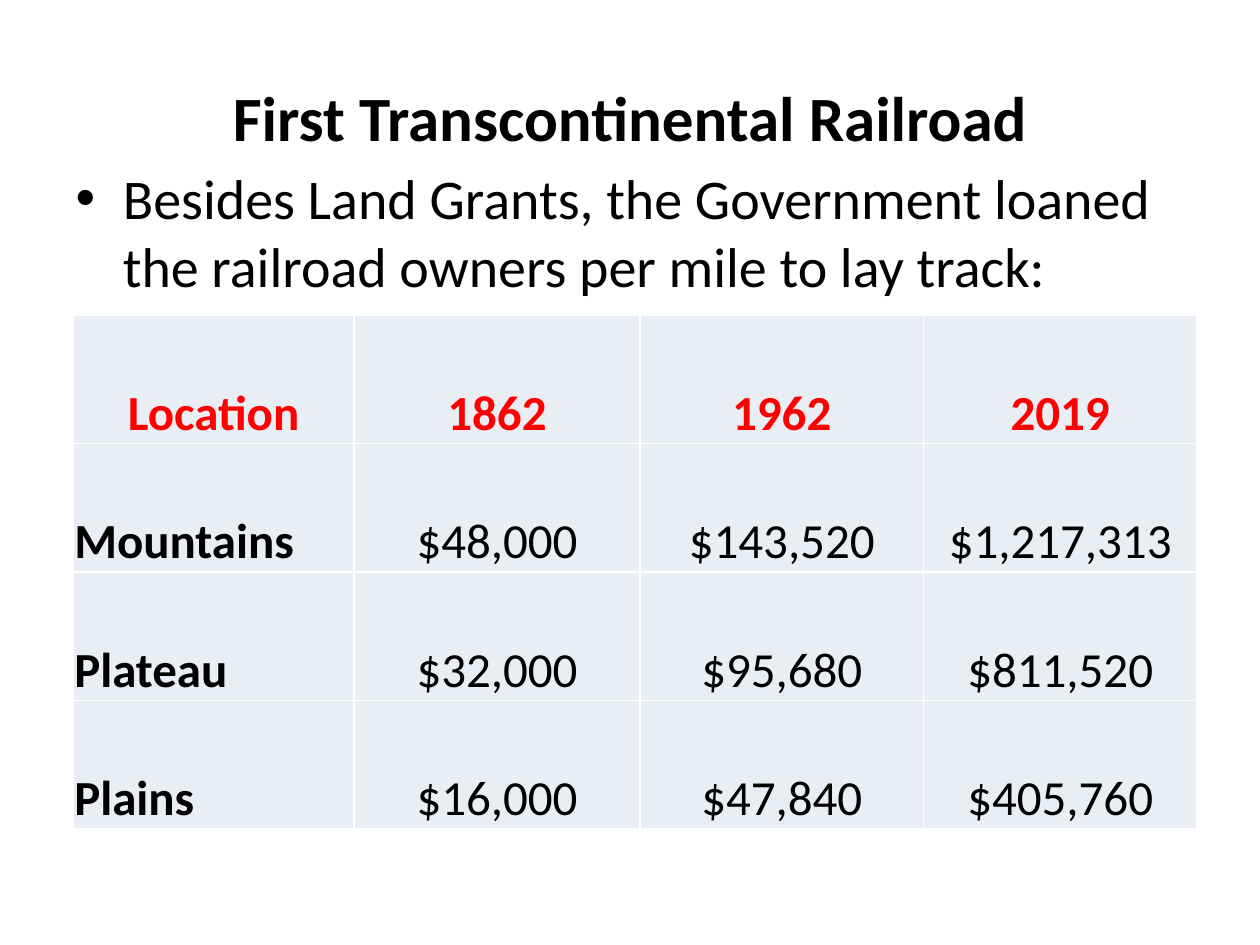
from typing import NamedTuple

from lxml.etree import SubElement
from pptx import Presentation
from pptx.dml.color import RGBColor
from pptx.enum.text import MSO_ANCHOR as Anchor, PP_ALIGN as Align
from pptx.oxml.ns import qn
from pptx.util import Inches, Pt

FONT = "Calibri"
BLACK, RED, WHITE, PALE_BLUE = "000000", "FF0000", "FFFFFF", "E9EDF4"
SLIDE_WIDTH, SLIDE_HEIGHT = Inches(10), Inches(7.5)
COLUMN_WIDTHS = (2.23, 2.27, 2.25, 2.17)
ROW_HEIGHT = 1.02


class Loan(NamedTuple):
    location: str
    in_1862: str
    in_1962: str
    in_2019: str


HEADINGS = Loan("Location", "1862", "1962", "2019")
LOANS = [
    Loan("Mountains", "$48,000", "$143,520", "$1,217,313"),
    Loan("Plateau", "$32,000", "$95,680", "$811,520"),
    Loan("Plains", "$16,000", "$47,840", "$405,760"),
]


def color(value: str) -> RGBColor:
    return RGBColor.from_string(value)


def place(shape, left: float, top: float, width: float, height: float) -> None:
    """Position a shape by shares of the slide's size."""
    shape.left, shape.width = int(left * SLIDE_WIDTH), int(width * SLIDE_WIDTH)
    shape.top, shape.height = int(top * SLIDE_HEIGHT), int(height * SLIDE_HEIGHT)


def write(frame, text: str, size: int, ink: str, bold: bool, align: Align) -> None:
    frame.text = text
    paragraph = frame.paragraphs[0]
    paragraph.alignment = align
    font = paragraph.font
    font.name, font.size, font.bold = FONT, Pt(size), bold
    font.color.rgb = color(ink)


def add_borders(cell, ink: str, width: float) -> None:
    properties = cell._tc.get_or_add_tcPr()
    for side in ("lnL", "lnR", "lnT", "lnB"):
        line = SubElement(properties, qn(f"a:{side}"), w=str(Pt(width)))
        fill = SubElement(line, qn("a:solidFill"))
        SubElement(fill, qn("a:srgbClr"), val=ink)


def format_cell(cell, text: str, is_heading: bool, is_location: bool) -> None:
    align = Align.LEFT if is_location and not is_heading else Align.CENTER
    write(cell.text_frame, text, 28, RED if is_heading else BLACK,
          is_heading or is_location, align)
    cell.vertical_anchor = Anchor.BOTTOM
    cell.margin_left = cell.margin_right = cell.margin_top = Inches(0.01)
    cell.margin_bottom = 0
    add_borders(cell, WHITE, 1)
    cell.fill.solid()
    cell.fill.fore_color.rgb = color(PALE_BLUE)


def add_loan_table(slide, rows: list[Loan]) -> None:
    table = slide.shapes.add_table(
        len(rows), len(COLUMN_WIDTHS), Inches(0.58), Inches(2.5),
        Inches(sum(COLUMN_WIDTHS)), Inches(ROW_HEIGHT * len(rows))).table
    for column, width in zip(table.columns, COLUMN_WIDTHS):
        column.width = Inches(width)
    for r, loan in enumerate(rows):
        for c, text in enumerate(loan):
            format_cell(table.cell(r, c), text, r == 0, c == 0)


def main() -> None:
    deck = Presentation()
    deck.slide_width, deck.slide_height = SLIDE_WIDTH, SLIDE_HEIGHT
    slide = deck.slides.add_slide(deck.slide_layouts[1])

    title, body = slide.shapes.title, slide.placeholders[1]
    place(title, 0.05, 0.04, 0.9, 1 / 6)
    title.text_frame.vertical_anchor = Anchor.MIDDLE
    write(title.text_frame, "First Transcontinental Railroad", 36, BLACK, True, Align.CENTER)

    place(body, 0.05, 1 / 6, 0.9, 0.73)
    write(body.text_frame,
          "Besides Land Grants, the Government loaned the railroad owners per mile to lay track:",
          32, BLACK, False, Align.LEFT)

    add_loan_table(slide, [HEADINGS, *LOANS])
    deck.save("out.pptx")


if __name__ == "__main__":
    main()
